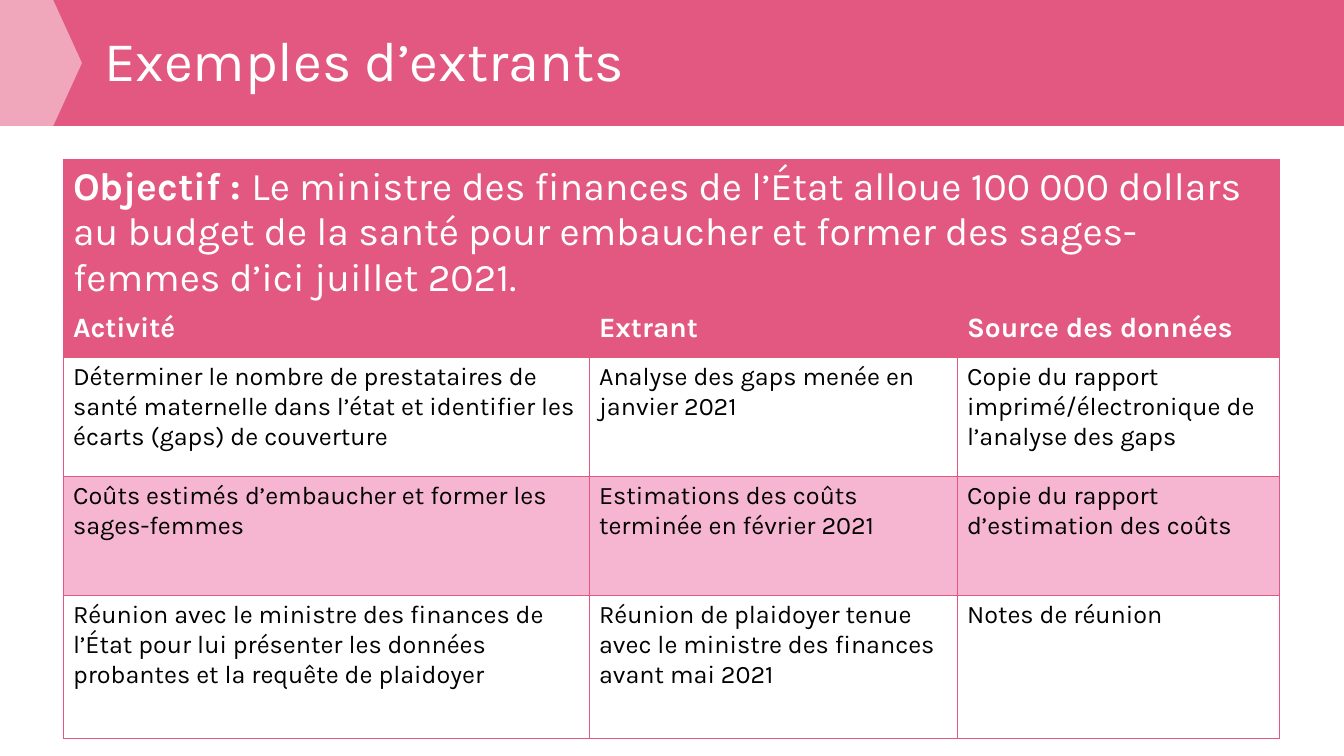
"""Build the slide of sample outputs: a title banner above a table."""
from lxml import etree
from pptx import Presentation
from pptx.dml.color import RGBColor
from pptx.enum.shapes import MSO_SHAPE
from pptx.enum.text import MSO_ANCHOR, MSO_AUTO_SIZE, PP_ALIGN
from pptx.oxml.ns import qn
from pptx.util import Pt

RECT, ARROW = MSO_SHAPE.RECTANGLE, MSO_SHAPE.PENTAGON
LEFT, MIDDLE, FIXED = PP_ALIGN.LEFT, MSO_ANCHOR.MIDDLE, MSO_AUTO_SIZE.NONE
SCALE = 914400 / 100.8
FONT = "Karla"
HUES = {"rose": "E35880", "pale": "F6B5D1", "white": "FFFFFF", "black": "000000"}


def px(*sizes):
    return [round(size * SCALE) for size in sizes]


def write(para, text, size, hue, bold=False):
    run = para.add_run()
    run.text = text
    look = {"name": FONT, "size": Pt(size), "bold": bold}
    for key, value in look.items():
        setattr(run.font, key, value)
    run.font.color.rgb = RGBColor.from_string(HUES[hue])


deck = Presentation()
deck.slide_width, deck.slide_height = px(1344, 756)
slide = deck.slides.add_slide(deck.slide_layouts[5])
shapes = slide.shapes
title = shapes.title

for kind, width, hue in [(RECT, 1344, "rose"), (ARROW, 82, "white")]:
    shape = shapes.add_shape(kind, *px(0, 0, width, 126))
    shape.shadow.inherit = False
    shape.line.fill.background()
    shape.fill.solid()
    shape.fill.fore_color.rgb = RGBColor.from_string(HUES[hue])
shape.adjustments[0] = 0.35
tint = shape.fill._xPr.find(qn("a:solidFill"))[0]
etree.SubElement(tint, qn("a:alpha"), val="47000")

shapes._spTree.append(title._element)
title.left, title.top, title.width, title.height = px(94, 20, 1059, 87)
frame = title.text_frame
frame.auto_size, frame.vertical_anchor, frame.word_wrap = FIXED, MIDDLE, True
head = frame.paragraphs[0]
head.alignment, head.line_spacing = LEFT, 0.9
write(head, "Exemples d’extrants", 40, "white")

goal = [
    ("Objectif : ", True),
    ("Le ministre des finances de l’État alloue 100 000 dollars au budget de la "
     "santé pour embaucher et former des sages-femmes d’ici juillet 2021.", False),
]
rows = [
    ("Activité", "Extrant", "Source des données"),
    ("Déterminer le nombre de prestataires de santé maternelle dans l’état et "
     "identifier les écarts (gaps) de couverture",
     "Analyse des gaps menée en janvier 2021",
     "Copie du rapport imprimé/électronique de l’analyse des gaps"),
    ("Coûts estimés d’embaucher et former les sages-femmes",
     "Estimations des coûts terminée en février 2021",
     "Copie du rapport d’estimation des coûts"),
    ("Réunion avec le ministre des finances de l’État pour lui présenter les "
     "données probantes et la requête de plaidoyer",
     "Réunion de plaidoyer tenue avec le ministre des finances avant mai 2021",
     "Notes de réunion"),
]
widths = [526, 368, 322]
heights = [142, 51, 119, 119, 143]
fills = ["rose", "rose", "white", "pale", "white"]

place = px(63, 159, sum(widths), sum(heights))
table = shapes.add_table(len(heights), len(widths), *place).table
table.first_row = table.horz_banding = False
for col, width in zip(table.columns, px(*widths)):
    col.width = width
for row, height, hue in zip(table.rows, px(*heights), fills):
    row.height = height
    for cell in row.cells:
        cell.fill.solid()
        cell.fill.fore_color.rgb = RGBColor.from_string(HUES[hue])
        props = cell._tc.get_or_add_tcPr()
        for spot, side in enumerate(["lnL", "lnR", "lnT", "lnB"]):
            edge = etree.Element(qn("a:" + side), w=str(Pt(0.5)))
            paint = etree.SubElement(edge, qn("a:solidFill"))
            etree.SubElement(paint, qn("a:srgbClr"), val=HUES["rose"])
            props.insert(spot, edge)

table.cell(0, 0).merge(table.cell(0, 2))
for text, bold in goal:
    write(table.cell(0, 0).text_frame.paragraphs[0], text, 28, "white", bold)
for r, texts in enumerate(rows, 1):
    look = (20, "white", True) if r == 1 else (18, "black")
    for c, text in enumerate(texts):
        write(table.cell(r, c).text_frame.paragraphs[0], text, *look)

deck.save("out.pptx")
